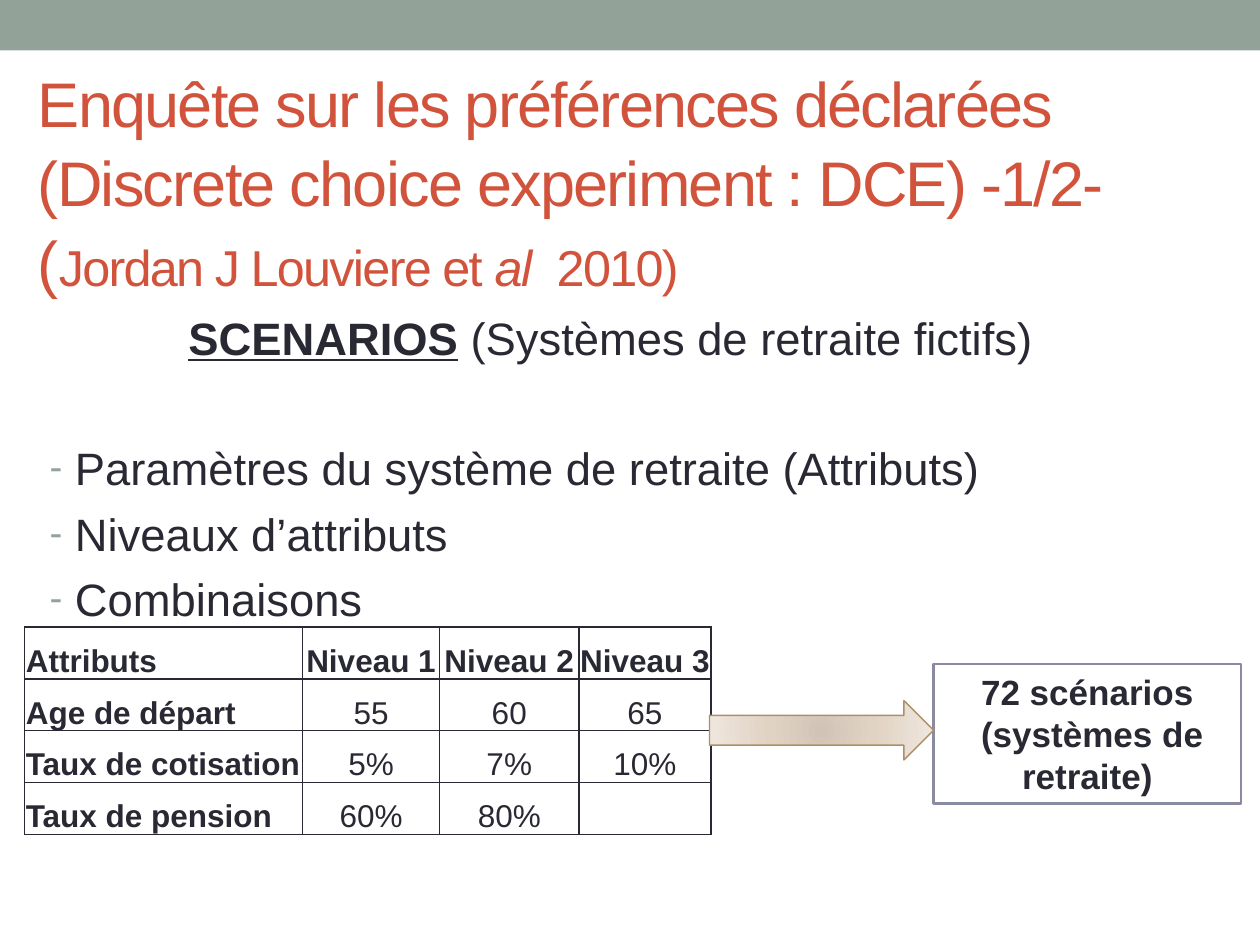
from lxml import etree
from pptx import Presentation
from pptx.dml.color import RGBColor
from pptx.enum import shapes, text
from pptx.oxml import ns
from pptx.util import Pt

THEME = {
    "font": "Arial",
    "ink": "292934", "title": "D2533C", "band": "93A299",
    "box_line": "8A8AA3", "arrow_line": "AD8F67",
    "arrow_stops": [(0, "D1C4B6"), (45, "E1D3C4"), (100, "EFE7DF")],
    "title_size": 36, "cite_size": 28.8, "body_size": 25.9,
    "box_size": 20, "table_size": 18,
}


def xml(source):
    """Parse a DrawingML fragment written with the a: prefix."""
    return etree.fromstring(f'<root {ns.nsdecls("a")}>{source}</root>')[0]


def style(r, size, color="ink", bold=False):
    r.font.name = THEME["font"]
    r.font.size = Pt(size)
    r.font.bold = bold
    r.font.color.rgb = RGBColor.from_string(THEME[color])


prs = Presentation()
prs.slide_width, prs.slide_height = Pt(720), Pt(540)
s = prs.slides.add_slide(prs.slide_layouts[1])
title, body = s.placeholders[0], s.placeholders[1]

# Top band
sp = s.shapes.add_shape(shapes.MSO_SHAPE.RECTANGLE, 0, 0, Pt(720), Pt(28.8))
sp.shadow.inherit = False
sp.fill.solid()
sp.fill.fore_color.rgb = RGBColor.from_string(THEME["band"])
sp.line.fill.background()

# Title
title.left, title.top, title.width, title.height = Pt(14.4), Pt(43.2), Pt(706), Pt(119)
tf = title.text_frame
tf.auto_size = text.MSO_AUTO_SIZE.NONE
tf.vertical_anchor = text.MSO_ANCHOR.MIDDLE
p = tf.paragraphs[0]
p.text = "Enquête sur les préférences déclarées (Discrete choice experiment : DCE) -1/2-\v("
p.alignment = text.PP_ALIGN.LEFT
p.line_spacing = 1.05
for r in p.runs:
    style(r, THEME["title_size"], "title")
for words, italic in [("Jordan J Louviere et ", False), ("al  ", True), ("2010)", False)]:
    r = p.add_run()
    r.text = words
    style(r, THEME["cite_size"], "title")
    r.font.italic = italic
for r in p.runs:
    r.font._element.set("spc", "-100")

# Heading and list
body.left, body.top, body.width, body.height = Pt(14.4), Pt(139.7), Pt(669), Pt(391)
tf = body.text_frame
tf.auto_size = text.MSO_AUTO_SIZE.NONE
tf.margin_top = Pt(37.4)
p = tf.paragraphs[0]
p.alignment = text.PP_ALIGN.CENTER
p.space_before = Pt(0)
pPr = p._p.get_or_add_pPr()
pPr.set("marL", "0")
pPr.set("indent", "0")
pPr.append(xml("<a:buNone/>"))
for words, strong in [("SCENARIOS", True), (" (Systèmes de retraite fictifs)", False)]:
    r = p.add_run()
    r.text = words
    style(r, THEME["body_size"], bold=strong)
    r.font.underline = strong

items = [("Paramètres du système de retraite (Attributs)", 43.3),
         ("Niveaux d’attributs", 6.4), ("Combinaisons", 6.4)]
for words, gap in items:
    p = tf.add_paragraph()
    p.text = words
    p.space_before = Pt(gap)
    style(p.runs[0], THEME["body_size"])
    pPr = p._p.get_or_add_pPr()
    pPr.set("marL", str(int(Pt(21.2))))
    pPr.set("indent", str(-int(Pt(14.4))))
    for bullet in (f'<a:buClr><a:srgbClr val="{THEME["band"]}"/></a:buClr>',
                   '<a:buSzPct val="85000"/>', '<a:buFont typeface="Arial"/>',
                   '<a:buChar char="-"/>'):
        pPr.append(xml(bullet))

# Result box
sp = s.shapes.add_shape(shapes.MSO_SHAPE.RECTANGLE, Pt(533.5), Pt(379.4), Pt(175.7), Pt(79.9))
sp.shadow.inherit = False
sp.fill.background()
sp.line.color.rgb = RGBColor.from_string(THEME["box_line"])
sp.line.width = Pt(1.5)
tf = sp.text_frame
tf.word_wrap = True
tf.text = "72 scénarios\n (systèmes de retraite)"
for p in tf.paragraphs:
    p.alignment = text.PP_ALIGN.CENTER
    style(p.runs[0], THEME["box_size"], bold=True)

# Attribute table
rows = [("Attributs", "Niveau 1", "Niveau 2", "Niveau 3"),
        ("Age de départ", "55", "60", "65"),
        ("Taux de cotisation", "5%", "7%", "10%"),
        ("Taux de pension", "60%", "80%", "")]
widths = [158.7, 78.5, 79.5, 75.5]
row_height = 29.7
table = s.shapes.add_table(len(rows), len(widths), Pt(14.1), Pt(358.2),
                           Pt(sum(widths)), Pt(row_height * len(rows))).table
table.first_row = table.horz_banding = False
for column, width in zip(table.columns, widths):
    column.width = Pt(width)
for i, row in enumerate(rows):
    table.rows[i].height = Pt(row_height)
    for j, words in enumerate(row):
        cell = table.cell(i, j)
        cell.margin_left = cell.margin_right = cell.margin_top = Pt(0.7)
        cell.margin_bottom = 0
        cell.vertical_anchor = text.MSO_ANCHOR.BOTTOM
        tcPr = cell._tc.get_or_add_tcPr()
        for side in ("lnL", "lnR", "lnT", "lnB"):
            tcPr.append(xml(f'<a:{side} w="{int(Pt(1))}"><a:solidFill><a:srgbClr '
                            f'val="{THEME["ink"]}"/></a:solidFill></a:{side}>'))
        cell.fill.background()
        p = cell.text_frame.paragraphs[0]
        p.text = words
        p.alignment = text.PP_ALIGN.CENTER if j else text.PP_ALIGN.LEFT
        for r in p.runs:
            style(r, THEME["table_size"], bold=i == 0 or j == 0)

# Arrow from the table to the result
sp = s.shapes.add_shape(shapes.MSO_SHAPE.RIGHT_ARROW, Pt(405.4), Pt(400.3), Pt(128.1), Pt(34))
sp.shadow.inherit = False
sp.line.color.rgb = RGBColor.from_string(THEME["arrow_line"])
sp.line.width = Pt(0.75)
stops = "".join(f'<a:gs pos="{pos * 1000}"><a:srgbClr val="{color}"/></a:gs>'
                for pos, color in THEME["arrow_stops"])
sp._element.spPr.insert(2, xml(
    f'<a:gradFill rotWithShape="1"><a:gsLst>{stops}</a:gsLst><a:path path="circle">'
    '<a:fillToRect l="50000" t="50000" r="50000" b="50000"/></a:path></a:gradFill>'))

prs.save("out.pptx")
